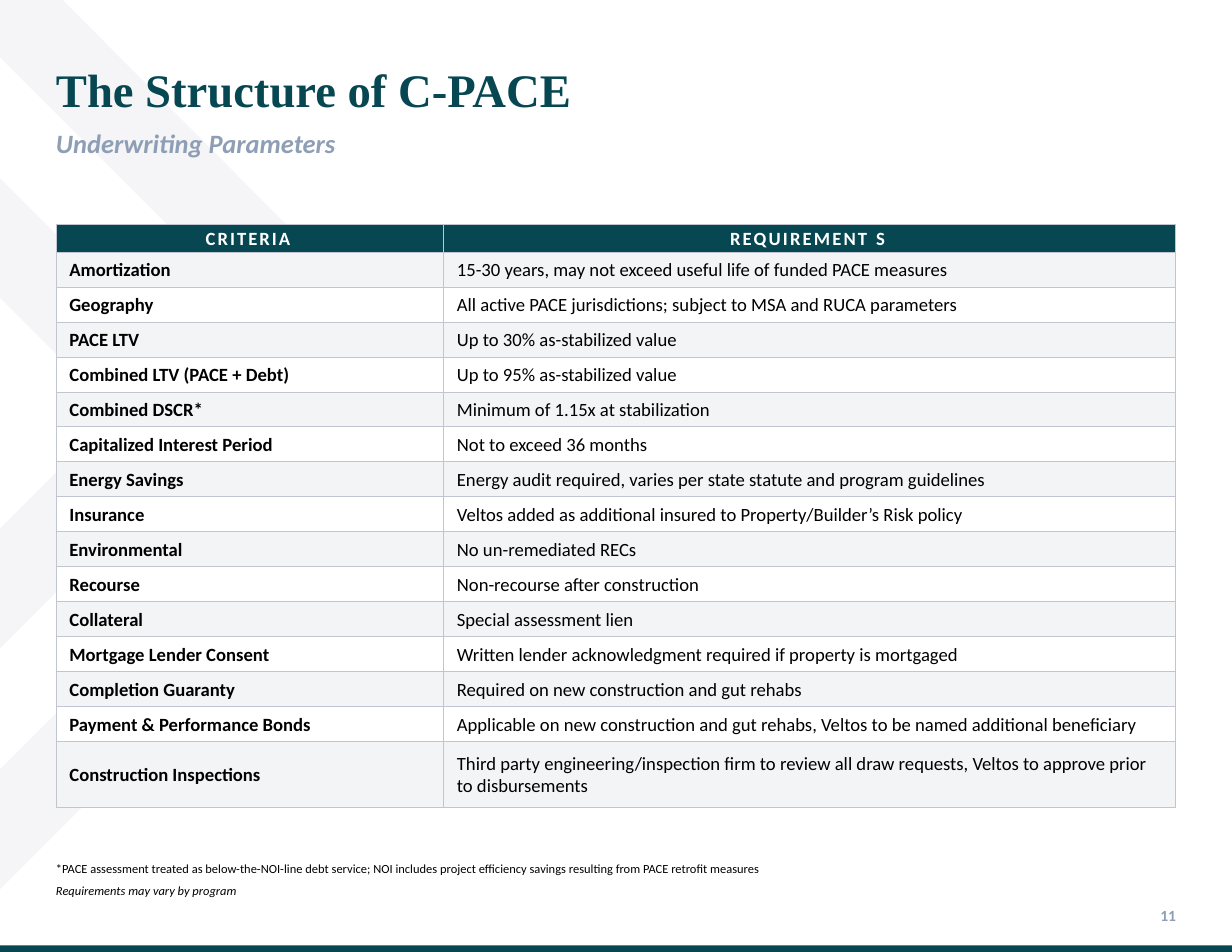
from lxml import etree
from pptx import Presentation
from pptx.dml.color import RGBColor
from pptx.enum import shapes, text
from pptx.oxml import ns
from pptx.util import Inches, Pt

COLORS = {
    "teal": "064752", "slate": "8D9EB5", "chevron": "F5F5F7", "band": "F3F4F6",
    "border": "C0C5D1", "white": "FFFFFF", "black": "000000",
}

TITLE, SUBTITLE = "The Structure of C-PACE", "Underwriting Parameters"
# Each header is a list of (text, letter spacing in points) runs.
HEADERS = ([("CRITERIA", 1.3)], [("REQUIREMENT ", 1.4), ("S", -0.5)])
CRITERIA = [
    ("Amortization", "15-30 years, may not exceed useful life of funded PACE measures"),
    ("Geography", "All active PACE jurisdictions; subject to MSA and RUCA parameters"),
    ("PACE LTV", "Up to 30% as-stabilized value"),
    ("Combined LTV (PACE + Debt)", "Up to 95% as-stabilized value"),
    ("Combined DSCR*", "Minimum of 1.15x at stabilization"),
    ("Capitalized Interest Period", "Not to exceed 36 months"),
    ("Energy Savings", "Energy audit required, varies per state statute and program guidelines"),
    ("Insurance", "Veltos added as additional insured to Property/Builder’s Risk policy"),
    ("Environmental", "No un-remediated RECs"),
    ("Recourse", "Non-recourse after construction"),
    ("Collateral", "Special assessment lien"),
    ("Mortgage Lender Consent", "Written lender acknowledgment required if property is mortgaged"),
    ("Completion Guaranty", "Required on new construction and gut rehabs"),
    ("Payment & Performance Bonds",
     "Applicable on new construction and gut rehabs, Veltos to be named additional beneficiary"),
    ("Construction Inspections",
     "Third party engineering/inspection firm to review all draw requests, "
     "Veltos to approve prior to disbursements"),
]
FOOTNOTES = (
    "*PACE assessment treated as below-the-NOI-line debt service; NOI includes project "
    "efficiency savings resulting from PACE retrofit measures",
    "Requirements may vary by program",
)
PAGE_NUMBER = "11"

CHEVRONS = [
    [(0, 0), (0.56, 0), (3.17, 2.62), (0, 5.79), (0, 4.72), (1.03, 3.69),
     (0, 2.66), (0, 1.59), (1.57, 3.16), (2.11, 2.62), (0, 0.51)],
    [(2.36, 3.96), (1.82, 4.5), (2.1, 4.77), (0, 6.87), (0, 7.94), (3.17, 4.77)],
]

SLIDE_WIDTH, SLIDE_HEIGHT = 11, 8.5
FOOTER_HEIGHT = 0.06
TABLE_LEFT, TABLE_TOP = 0.5, 2
COLUMN_WIDTHS = (3.46, 6.53)
HEADER_HEIGHT, ROW_HEIGHT, LAST_HEIGHT = 0.25, 0.3125, 0.59


def rgb(name):
    return RGBColor.from_string(COLORS[name])


def paint(shape, color):
    shape.fill.solid()
    shape.fill.fore_color.rgb = rgb(color)
    shape.line.fill.background()
    shape.shadow.inherit = False


def add_bar(slide, left, top, width, height, color):
    bar = slide.shapes.add_shape(
        shapes.MSO_SHAPE.RECTANGLE, *map(Inches, (left, top, width, height)))
    paint(bar, color)


def style(paragraph, size, color, bold=False, italic=False, name="Calibri"):
    font = paragraph.font
    font.name, font.size, font.bold, font.italic = name, Pt(size), bold, italic
    font.color.rgb = rgb(color)


def add_text(slide, left, top, width, height, lines, inset=0, gap=0):
    """Add a text box from (text, style settings) pairs, one paragraph each."""
    frame = slide.shapes.add_textbox(*map(Inches, (left, top, width, height))).text_frame
    frame.word_wrap = True
    frame.margin_left = frame.margin_right = frame.margin_bottom = 0
    frame.margin_top = Inches(inset)
    for index, (line, settings) in enumerate(lines):
        paragraph = frame.add_paragraph() if index else frame.paragraphs[0]
        paragraph.text = line
        style(paragraph, **settings)
        if index:
            paragraph.space_before = Pt(gap)


def add_background(slide):
    for points in CHEVRONS:
        start, *rest = [(round(x * 100), round(y * 100)) for x, y in points]
        builder = slide.shapes.build_freeform(*start, scale=Inches(0.01))
        builder.add_line_segments(rest, close=True)
        paint(builder.convert_to_shape(), "chevron")
    add_bar(slide, 0, SLIDE_HEIGHT - FOOTER_HEIGHT, SLIDE_WIDTH, FOOTER_HEIGHT, "teal")


def add_borders(cell):
    properties = cell._tc.get_or_add_tcPr()
    for index, side in enumerate(("lnL", "lnR", "lnT", "lnB")):
        line = etree.Element(ns.qn("a:" + side), w=str(Pt(0.5)))
        fill = etree.SubElement(line, ns.qn("a:solidFill"))
        etree.SubElement(fill, ns.qn("a:srgbClr"), val=COLORS["border"])
        properties.insert(index, line)


def prepare_cell(cell, fill=None):
    """Format a cell and return its paragraph; without a fill it stays clear."""
    if fill:
        cell.fill.solid()
        cell.fill.fore_color.rgb = rgb(fill)
    else:
        cell.fill.background()
    cell.vertical_anchor = text.MSO_ANCHOR.MIDDLE
    cell.margin_top, cell.margin_bottom = Inches(0.02), 0
    cell.margin_left, cell.margin_right = Inches(0.12), Inches(0.15)
    add_borders(cell)
    return cell.text_frame.paragraphs[0]


def add_criteria_table(slide):
    for row in range(1, len(CRITERIA), 2):
        top = TABLE_TOP + HEADER_HEIGHT + row * ROW_HEIGHT
        add_bar(slide, TABLE_LEFT, top, COLUMN_WIDTHS[0], ROW_HEIGHT, "white")

    heights = [HEADER_HEIGHT] + [ROW_HEIGHT] * (len(CRITERIA) - 1) + [LAST_HEIGHT]
    table = slide.shapes.add_table(
        len(heights), len(COLUMN_WIDTHS), Inches(TABLE_LEFT), Inches(TABLE_TOP),
        Inches(sum(COLUMN_WIDTHS)), Inches(sum(heights))).table
    for column, width in zip(table.columns, COLUMN_WIDTHS):
        column.width = Inches(width)
    for row, height in zip(table.rows, heights):
        row.height = Inches(height)

    for column, header in enumerate(HEADERS):
        paragraph = prepare_cell(table.cell(0, column), "teal")
        paragraph.alignment = text.PP_ALIGN.CENTER
        style(paragraph, 12, "white", bold=True)
        for content, spacing in header:
            run = paragraph.add_run()
            run.text = content
            run._r.get_or_add_rPr().set("spc", str(round(spacing * 100)))
    for row, entry in enumerate(CRITERIA, start=1):
        for column, content in enumerate(entry):
            paragraph = prepare_cell(table.cell(row, column), "band" if row % 2 else None)
            paragraph.text = content
            paragraph.line_spacing = Pt(14)
            style(paragraph, 12, "black", bold=column == 0)


def main():
    presentation = Presentation()
    presentation.slide_width = Inches(SLIDE_WIDTH)
    presentation.slide_height = Inches(SLIDE_HEIGHT)
    slide = presentation.slides.add_slide(presentation.slide_layouts[6])

    add_background(slide)
    add_text(slide, 0.5, 0.37, 4.63, 1.07, [
        (TITLE, dict(size=30, color="teal", bold=True, name="Times New Roman")),
        (SUBTITLE, dict(size=17, color="slate", bold=True, italic=True)),
    ], inset=0.17, gap=6.6)
    add_criteria_table(slide)
    add_text(slide, 0.5, 7.62, 6.4, 0.42, [
        (FOOTNOTES[0], dict(size=8, color="black")),
        (FOOTNOTES[1], dict(size=8, color="black", italic=True)),
    ], inset=0.07, gap=4.4)
    add_text(slide, 10.36, 8.09, 0.24, 0.17,
             [(PAGE_NUMBER, dict(size=10, color="slate", bold=True))])
    presentation.save("out.pptx")


if __name__ == "__main__":
    main()
